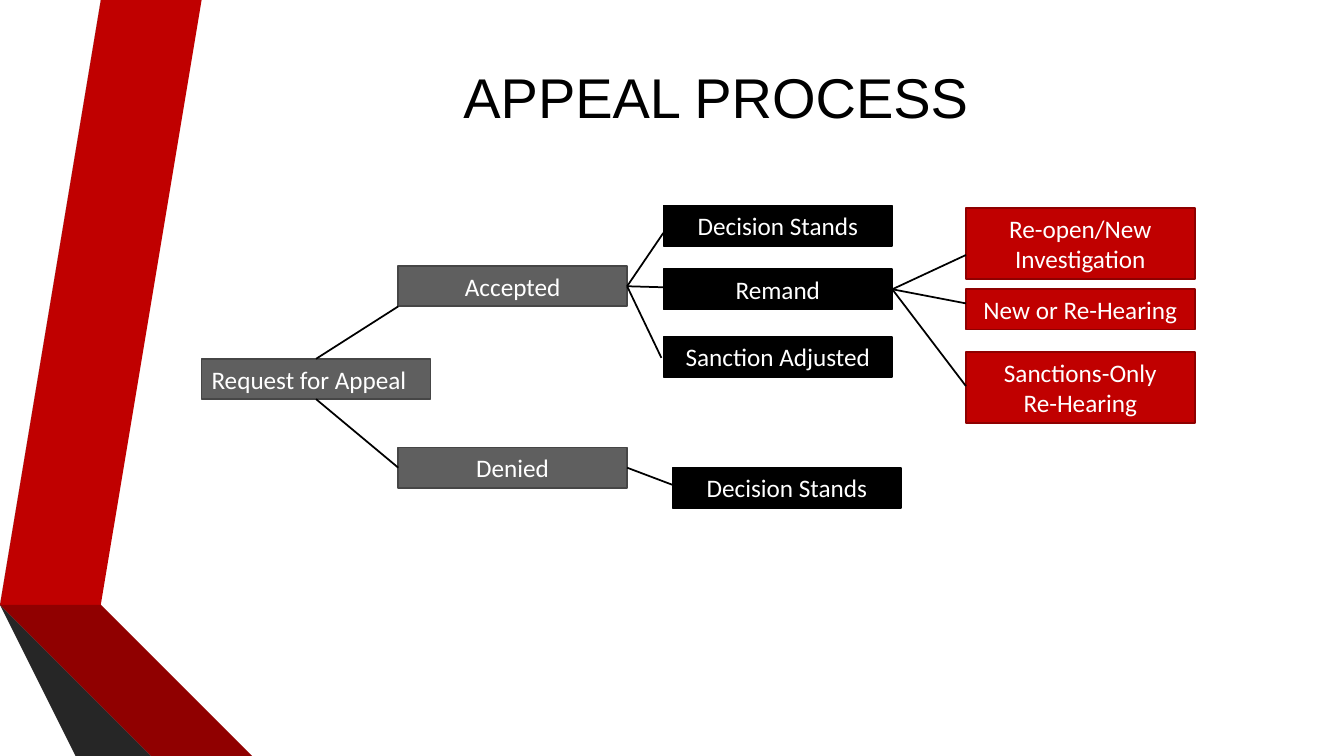
from pptx import Presentation
from pptx import util as u
from pptx.dml.color import RGBColor
from pptx.enum import shapes, text
from lxml import etree

THEME = {
    "gray": ("5F5F5F", "464646"),    # fill, outline
    "black": ("000000", "000000"),
    "red": ("C00000", "8E0000"),
    "ink": "000000", "paper": "FFFFFF",
    "title_font": "Arial", "body_font": "Calibri",
    "title_size": 40, "body_size": 18, "line": 1.25,
}

# Content
TITLE = "APPEAL PROCESS"
BOX_W, ONE_LINE, TWO_LINES = 2.27, 0.4, 0.71

# key: (lines, left, top, height, style)
BOXES = {
    "request": (["Request for Appeal"], 2.0, 3.56, ONE_LINE, "gray"),
    "accepted": (["Accepted"], 3.95, 2.64, ONE_LINE, "gray"),
    "denied": (["Denied"], 3.95, 4.44, ONE_LINE, "gray"),
    "stands": (["Decision Stands"], 6.58, 2.04, ONE_LINE, "black"),
    "remand": (["Remand"], 6.58, 2.67, ONE_LINE, "black"),
    "adjusted": (["Sanction Adjusted"], 6.58, 3.34, ONE_LINE, "black"),
    "denied_stands": (["Decision Stands"], 6.67, 4.64, ONE_LINE, "black"),
    "reopen": (["Re-open/New Investigation"], 9.58, 2.06, TWO_LINES, "red"),
    "rehearing": (["New or Re-Hearing"], 9.58, 2.87, ONE_LINE, "red"),
    "sanctions": (["Sanctions-Only", "Re-Hearing"], 9.58, 3.49, TWO_LINES, "red"),
}

# Connection sites of a rectangle
TOP, BOTTOM, RIGHT = 0, 2, 3

# (box, site) -> end points
LINKS = {
    ("request", TOP): [(3.95, 3.04)],
    ("request", BOTTOM): [(3.95, 4.64)],
    ("accepted", RIGHT): [(6.58, 2.31), (6.58, 2.85), (6.56, 3.55)],
    ("denied", RIGHT): [(6.67, 4.81)],
    ("remand", RIGHT): [(9.58, 2.53), (9.58, 3.01), (9.58, 3.83)],
}

# Folded ribbons at the left edge: (fill, corners)
RIBBONS = [
    ("C00000", [(0.5, 5.78), (0.77, 5.83), (1.73, 0), (1.45, 0)]),
    ("595959", [(1.39, 0), (1.11, 0), (0.16, 5.73), (0.44, 5.77)]),
    ("262626", [(0.16, 5.73), (1.45, 7.5), (1.51, 7.5)]),
    ("600000", [(0.5, 5.79), (2.08, 7.5), (2.14, 7.5)]),
    ("900000", [(0.5, 5.78), (2.14, 7.5), (2.83, 7.5), (0.77, 5.83)]),
    ("404040", [(2.02, 7.5), (0.44, 5.77), (0.16, 5.73), (1.51, 7.5)]),
]


def color(value):
    return RGBColor.from_string(value)


def paint(sp, fill, outline=None):
    sp.shadow.inherit = False
    sp.fill.solid()
    sp.fill.fore_color.rgb = color(fill)
    if outline:
        sp.line.color.rgb = color(outline)
        sp.line.width = u.Pt(THEME["line"])
    else:
        sp.line.fill.background()


def write(sp, lines, *, font, size, ink, align=text.PP_ALIGN.CENTER):
    tf = sp.text_frame
    tf.word_wrap = True
    tf.vertical_anchor = text.MSO_ANCHOR.MIDDLE
    for i, line in enumerate(lines):
        p = tf.paragraphs[0] if i == 0 else tf.add_paragraph()
        p.alignment = align
        r = p.add_run()
        r.text = line
        r.font.name, r.font.size = font, u.Pt(size)
        r.font.color.rgb = color(ink)


def main():
    prs = Presentation()
    prs.slide_width, prs.slide_height = u.Inches(13.33), u.Inches(7.5)
    s = prs.slides.add_slide(prs.slide_layouts[6])

    # Ribbons
    for fill, corners in RIBBONS:
        outline = s.shapes.build_freeform(*corners[0], scale=u.Inches(1))
        outline.add_line_segments(corners[1:], close=True)
        paint(outline.convert_to_shape(), fill)

    # Title
    title = s.shapes.add_textbox(*map(u.Inches, (1.62, 0.42, 10.96, 1.07)))
    write(title, [TITLE], font=THEME["title_font"], size=THEME["title_size"],
          ink=THEME["ink"])

    # Boxes
    placed = {}
    for key, (lines, left, top, height, style) in BOXES.items():
        sp = s.shapes.add_shape(shapes.MSO_SHAPE.RECTANGLE,
                                *map(u.Inches, (left, top, BOX_W, height)))
        paint(sp, *THEME[style])
        align = text.PP_ALIGN.LEFT if key == "request" else text.PP_ALIGN.CENTER
        write(sp, lines, font=THEME["body_font"], size=THEME["body_size"],
              ink=THEME["paper"], align=align)
        placed[key] = sp

    # Connectors
    for (key, site), ends in LINKS.items():
        for x, y in ends:
            line = s.shapes.add_connector(shapes.MSO_CONNECTOR.STRAIGHT, 0, 0,
                                          u.Inches(x), u.Inches(y))
            line.begin_connect(placed[key], site)
            line.line.color.rgb = color(THEME["ink"])
            line.line.width = u.Pt(THEME["line"])
            etree.SubElement(
                line._element.spPr,
                "{http://schemas.openxmlformats.org/drawingml/2006/main}effectLst")

    prs.save("out.pptx")


if __name__ == "__main__":
    main()
